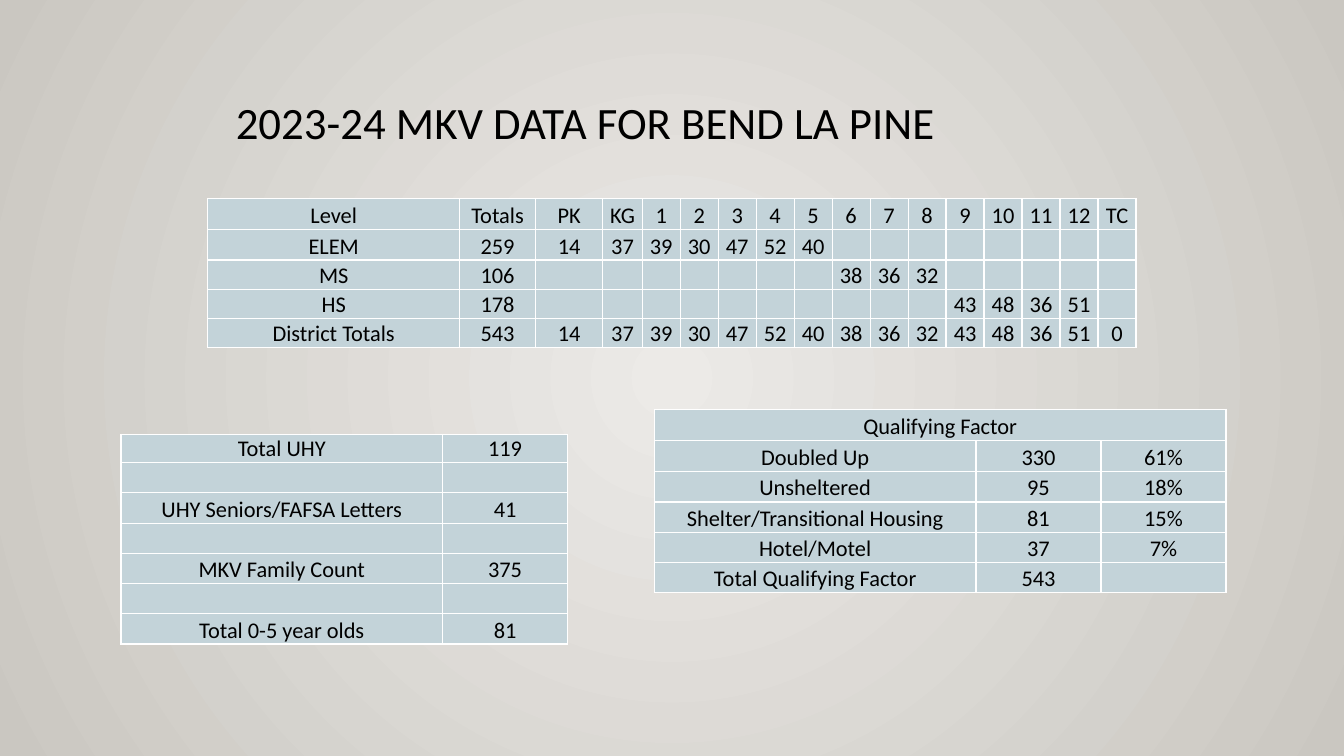
from dataclasses import dataclass

from lxml.etree import SubElement
from pptx import Presentation
from pptx.dml.color import RGBColor
from pptx.enum.text import MSO_ANCHOR, PP_ALIGN
from pptx.oxml.ns import qn
from pptx.util import Inches, Pt


@dataclass(frozen=True)
class Theme:
    font: str = "Calibri"
    title_size: int = 32
    table_size: int = 16
    text: str = "000000"
    cell: str = "C3D3D9"
    border: str = "FFFFFF"
    border_width: int = 1
    center: str = "ECEAE7"
    edge: str = "CAC7C1"


def write_text(frame, text, *, theme, size, align=PP_ALIGN.LEFT):
    paragraph = frame.paragraphs[0]
    paragraph.alignment = align
    if not text:
        # An empty cell needs its own type size to keep the row low.
        SubElement(paragraph._p, qn("a:endParaRPr"), sz=str(size * 100))
        return
    run = paragraph.add_run()
    run.text = text
    run.font.name = theme.font
    run.font.size = Pt(size)
    run.font.color.rgb = RGBColor.from_string(theme.text)


class SlideBuilder:
    def __init__(self, slide, theme):
        self.slide = slide
        self.theme = theme

    def background(self):
        """Fill the slide with a circular gradient from center to edge."""
        fill = self.slide.background.fill
        fill.gradient()
        colors = (self.theme.center, self.theme.edge)
        for position, (stop, color) in enumerate(zip(fill.gradient_stops, colors)):
            stop.position = position
            stop.color.rgb = RGBColor.from_string(color)
        gradient = self.slide._element.find(".//" + qn("a:gradFill"))
        gradient.remove(gradient.find(qn("a:lin")))
        path = SubElement(gradient, qn("a:path"), path="circle")
        SubElement(path, qn("a:fillToRect"), l="50000", t="50000", r="50000", b="50000")

    def title(self, text, left, top, width, height):
        box = self.slide.shapes.add_textbox(
            Inches(left), Inches(top), Inches(width), Inches(height))
        frame = box.text_frame
        frame.word_wrap = True
        frame.vertical_anchor = MSO_ANCHOR.TOP
        frame.margin_left = frame.margin_right = Inches(0.1)
        frame.margin_top = frame.margin_bottom = Inches(0.1)
        write_text(frame, text, theme=self.theme, size=self.theme.title_size)

    def table(self, rows, left, top, column_widths, row_heights):
        shape = self.slide.shapes.add_table(
            len(rows), len(column_widths), Inches(left), Inches(top),
            Inches(sum(column_widths)), Inches(sum(row_heights)))
        table = shape.table
        for column, width in zip(table.columns, column_widths):
            column.width = Inches(width)
        for row, height, texts in zip(table.rows, row_heights, rows):
            row.height = Inches(height)
            for cell, text in zip(row.cells, texts):
                self.cell(cell, text)
        return table

    def cell(self, cell, text):
        cell.margin_left = cell.margin_right = cell.margin_top = Inches(0.01)
        cell.margin_bottom = 0
        cell.vertical_anchor = MSO_ANCHOR.BOTTOM
        properties = cell._tc.get_or_add_tcPr()
        for side in ("lnL", "lnR", "lnT", "lnB"):
            line = SubElement(properties, qn(f"a:{side}"),
                              w=str(Pt(self.theme.border_width)))
            solid = SubElement(line, qn("a:solidFill"))
            SubElement(solid, qn("a:srgbClr"), val=self.theme.border)
        cell.fill.solid()
        cell.fill.fore_color.rgb = RGBColor.from_string(self.theme.cell)
        write_text(cell.text_frame, text, theme=self.theme,
                   size=self.theme.table_size, align=PP_ALIGN.CENTER)


GRADES = ["PK", "KG", *map(str, range(1, 13)), "TC"]
GRADE_COUNTS = [14, 37, 39, 30, 47, 52, 40, 38, 36, 32, 43, 48, 36, 51, 0]
# Each level covers the grades from its first index up to its end index.
LEVELS = {"ELEM": (0, 7), "MS": (7, 10), "HS": (10, 14)}

QUALIFYING_FACTORS = [
    ["Qualifying Factor", "", ""],
    ["Doubled Up", "330", "61%"],
    ["Unsheltered", "95", "18%"],
    ["Shelter/Transitional Housing", "81", "15%"],
    ["Hotel/Motel", "37", "7%"],
    ["Total Qualifying Factor", "543", ""],
]

FAMILY_COUNTS = [
    ["Total UHY", "119"],
    ["", ""],
    ["UHY Seniors/FAFSA Letters", "41"],
    ["", ""],
    ["MKV Family Count", "375"],
    ["", ""],
    ["Total 0-5 year olds", "81"],
]


def level_rows():
    rows = [["Level", "Totals", *GRADES]]
    for level, (first, end) in LEVELS.items():
        counts = [str(count) if first <= index < end else ""
                  for index, count in enumerate(GRADE_COUNTS)]
        rows.append([level, str(sum(GRADE_COUNTS[first:end])), *counts])
    rows.append(["District Totals", str(sum(GRADE_COUNTS)), *map(str, GRADE_COUNTS)])
    return rows


def main():
    presentation = Presentation()
    presentation.slide_width = Inches(13.33)
    presentation.slide_height = Inches(7.5)
    slide = presentation.slides.add_slide(presentation.slide_layouts[6])
    builder = SlideBuilder(slide, Theme())
    builder.background()
    builder.title("2023-24 MKV DATA FOR BEND LA PINE", 2.24, 0.84, 10.48, 0.93)
    builder.table(level_rows(), 2.06, 1.97,
                  [2.5, 0.75, 0.67, 0.39] + [0.377] * 13,
                  [0.31, 0.3] + [0.29] * 3)
    factors = builder.table(QUALIFYING_FACTORS, 6.49, 4.06, [3.19, 1.24, 1.24],
                            [0.31, 0.31] + [0.3] * 4)
    factors.cell(0, 0).merge(factors.cell(0, 2))
    builder.table(FAMILY_COUNTS, 1.2, 4.31, [3.19, 1.24], [0.28] + [0.3] * 6)
    presentation.save("out.pptx")


if __name__ == "__main__":
    main()
